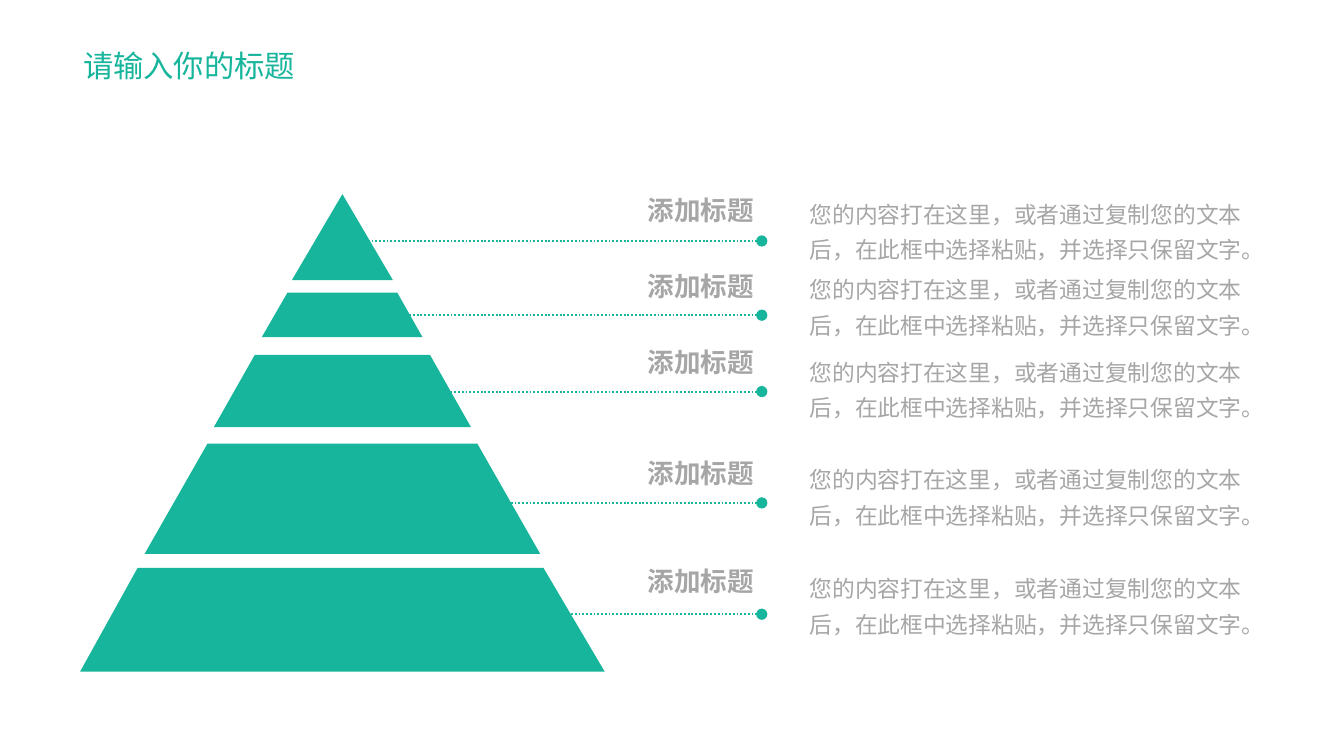
import pptx
import pptx.dml.color
import pptx.enum.dml
import pptx.enum.shapes
import pptx.enum.text
import pptx.oxml.ns
import pptx.util
from lxml import etree

Cm = pptx.util.Cm
FONT = "Noto Sans CJK SC"
COLOURS = {"teal": "16B59C", "grey": "A6A6A6"}
TITLE = "请输入你的标题"
HEADING = "添加标题"
BODY = "您的内容打在这里，或者通过复制您的文本后，在此框中选择粘贴，并选择只保留文字。"

# Pyramid tiers below the tip: top, bottom, then left and right of each edge
TIERS = [
    (5.44, 6.27, 5.35, 7.39, 4.87, 7.86),
    (6.6, 7.94, 4.74, 8, 3.98, 8.76),
    (8.25, 10.3, 3.86, 8.88, 2.69, 10.05),
    (10.56, 12.49, 2.56, 10.11, 1.49, 11.25),
]
# One row per tier: top of heading, top of body, height of leader line
ROWS = [
    (3.51, 3.48, 4.48),
    (4.92, 4.88, 5.86),
    (6.33, 6.41, 7.28),
    (8.39, 8.41, 9.35),
    (10.41, 10.44, 11.42),
]
LEADER_START, LEADER_END = 6.4, 14.17


def colour(name):
    return pptx.dml.color.RGBColor.from_string(COLOURS[name])


def add_child(parent, tag, **attributes):
    return etree.SubElement(parent, pptx.oxml.ns.qn(tag), attributes)


def paint(shape):
    shape.shadow.inherit = False
    shape.fill.solid()
    shape.fill.fore_color.rgb = colour("teal")
    shape.line.fill.background()


def add_tip(page, left, top, width, height):
    triangle = pptx.enum.shapes.MSO_SHAPE.ISOSCELES_TRIANGLE
    paint(page.shapes.add_shape(triangle, Cm(left), Cm(top), Cm(width), Cm(height)))


def add_tier(page, top, bottom, top_left, top_right, bottom_left, bottom_right):
    builder = page.shapes.build_freeform(Cm(top_left), Cm(top))
    corners = [(top_right, top), (bottom_right, bottom), (bottom_left, bottom)]
    builder.add_line_segments([(Cm(x), Cm(y)) for x, y in corners], close=True)
    paint(builder.convert_to_shape())


def add_leader(page, height):
    leader = page.shapes.add_connector(
        pptx.enum.shapes.MSO_CONNECTOR.STRAIGHT,
        Cm(LEADER_START), Cm(height), Cm(LEADER_END), Cm(height))
    leader.line.color.rgb = colour("teal")
    leader.line.width = pptx.util.Pt(1)
    leader.line.dash_style = pptx.enum.dml.MSO_LINE.ROUND_DOT
    properties = leader.line._get_or_add_ln()
    add_child(properties, "a:headEnd", type="oval")
    add_child(properties, "a:tailEnd", type="oval")
    add_child(properties.getparent(), "a:effectLst")


def add_text(page, text, area, size, tone, spacing=1, bold=False,
             centred=False, wrap=True, insets=(0.2, 0.1)):
    box = page.shapes.add_textbox(*(Cm(length) for length in area))
    frame = box.text_frame
    frame.word_wrap = wrap
    frame.auto_size = pptx.enum.text.MSO_AUTO_SIZE.SHAPE_TO_FIT_TEXT
    frame.margin_left = frame.margin_right = Cm(insets[0])
    frame.margin_top = frame.margin_bottom = Cm(insets[1])
    para = frame.paragraphs[0]
    para.line_spacing = spacing
    if centred:
        para.alignment = pptx.enum.text.PP_ALIGN.CENTER
    span = para.add_run()
    span.text = text
    span.font.size = pptx.util.Pt(size)
    span.font.bold = bold
    span.font.name = FONT
    span.font.color.rgb = colour(tone)
    add_child(span.font._element, "a:ea", typeface=FONT)


def main():
    deck = pptx.Presentation()
    deck.slide_width, deck.slide_height = Cm(25), Cm(14)
    page = deck.slides.add_slide(deck.slide_layouts[6])

    # Title
    add_text(page, TITLE, (1.3, 0.41, 5.38, 1.27), 16, "teal",
             spacing=1.5, insets=(0.25, 0.13))

    # Pyramid
    add_tip(page, 5.43, 3.61, 1.88, 1.6)
    for tier in TIERS:
        add_tier(page, *tier)

    # Leader lines, headings and descriptions
    for heading_top, body_top, leader_height in ROWS:
        add_leader(page, leader_height)
        add_text(page, BODY, (14.86, body_top, 8.69, 1.47), 12, "grey", spacing=1.3)
        add_text(page, HEADING, (11.84, heading_top, 2.39, 0.79), 14, "grey",
                 bold=True, centred=True, wrap=False)

    deck.save("out.pptx")


if __name__ == "__main__":
    main()
